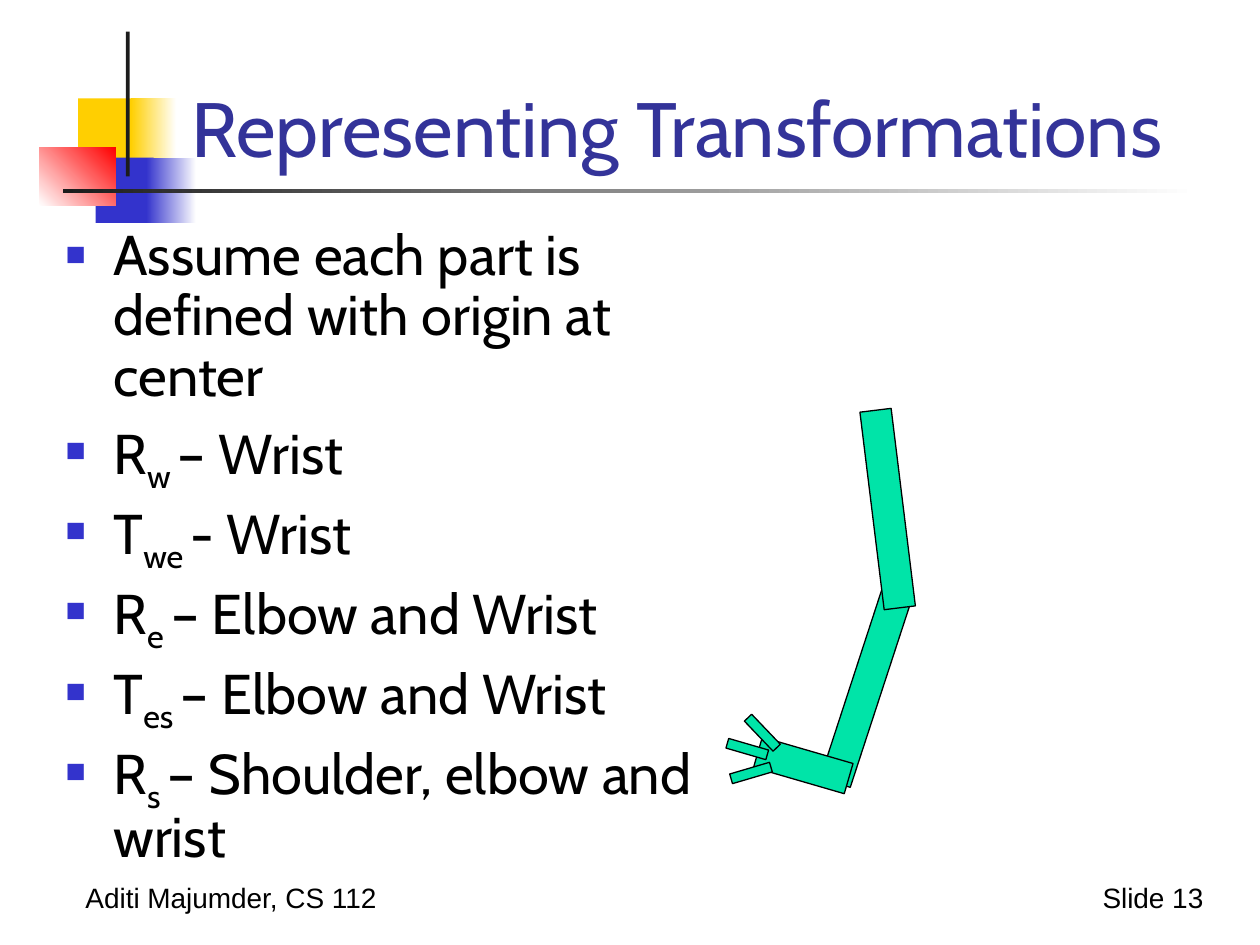
from dataclasses import dataclass

from lxml.etree import SubElement
from pptx import Presentation
from pptx.dml.color import RGBColor
from pptx.enum.shapes import MSO_SHAPE
from pptx.enum.text import MSO_ANCHOR, MSO_AUTO_SIZE, PP_ALIGN
from pptx.oxml.ns import qn
from pptx.util import Inches, Pt


@dataclass(frozen=True)
class Theme:
    heading_font: str = "Cabin"
    footer_font: str = "Arial"
    title_size: int = 44
    body_size: int = 32
    footer_size: int = 16
    title: str = "333399"
    text: str = "000000"
    yellow: str = "FFCF01"
    blue: str = "3333CC"
    red: str = "FF0000"
    dark: str = "1C1C1C"
    white: str = "FFFFFF"
    arm: str = "00E4A8"


THEME = Theme()
WIDTH, HEIGHT = 10, 7.5

TITLE = "Representing Transformations"
# Each bullet is (symbol, subscript, description).
BULLETS = [
    ("", "", "Assume each part is defined with origin at center"),
    ("R", "w ", "– Wrist"),
    ("T", "we ", "- Wrist"),
    ("R", "e ", "– Elbow and Wrist"),
    ("T", "es ", "– Elbow and Wrist"),
    ("R", "s ", "– Shoulder, elbow and wrist"),
]
# Each footer is (text, left, width, alignment).
FOOTERS = [
    ("Aditi Majumder, CS 112", 0.58, 2.55, PP_ALIGN.LEFT),
    ("Slide 13", 8.62, 1.03, PP_ALIGN.RIGHT),
]
# Each ornament is (box, colours from start to end, counter-clockwise angle).
ORNAMENTS = [
    ((0.62, 0.78, 0.48, 0.52), (THEME.yellow,), 0),
    ((1.04, 0.78, 0.36, 0.52), (THEME.yellow, THEME.white), 0),
    ((0.76, 1.25, 0.46, 0.52), (THEME.blue,), 0),
    ((1.16, 1.25, 0.40, 0.52), (THEME.blue, THEME.white), 0),
    ((0.31, 1.17, 0.61, 0.46), (THEME.white, THEME.red), 45),
    ((1.00, 0.25, 0.03, 1.15), (THEME.dark,), 0),
    ((0.50, 1.50, 9.00, 0.03), (THEME.dark, THEME.white), 0),
]
# Each limb is (left, top, rotation); the parts of one kind share a size.
LIMB_SIZE, PALM_SIZE, FINGER_SIZE = (0.25, 1.58), (0.25, 0.75), (0.08, 0.33)
FOREARM = (6.75, 4.67, 18.1)
UPPER_ARM = (6.92, 3.25, 353)
PALM = (6.25, 5.7, 106.2)
FINGERS = [(6.01, 5.65, 136.3), (5.89, 5.78, 106.2), (5.92, 5.97, 73.6)]


def color(value):
    return RGBColor.from_string(value)


def place(shape, left, top, width, height):
    shape.left, shape.top = Inches(left), Inches(top)
    shape.width, shape.height = Inches(width), Inches(height)


def add_rectangle(shapes, box, colors, angle=0, rotation=0, outline=None):
    shape = shapes.add_shape(MSO_SHAPE.RECTANGLE, *map(Inches, box))
    shape.shadow.inherit = False
    shape.rotation = rotation
    if len(colors) == 1:
        shape.fill.solid()
        shape.fill.fore_color.rgb = color(colors[0])
    else:
        shape.fill.gradient()
        shape.fill.gradient_angle = angle
        for stop, value in zip(shape.fill.gradient_stops, colors):
            stop.color.rgb = color(value)
    if outline:
        shape.line.color.rgb = color(outline)
        shape.line.width = Pt(0.75)
    else:
        shape.line.fill.background()


def add_arm_part(shapes, part, size):
    left, top, rotation = part
    add_rectangle(shapes, (left, top, *size), (THEME.arm,),
                  rotation=rotation, outline=THEME.text)


def add_run(paragraph, text, size, font=THEME.heading_font, fill=THEME.text, baseline=0):
    run = paragraph.add_run()
    run.text = text
    run.font.name, run.font.size = font, Pt(size)
    run.font.color.rgb = color(fill)
    if baseline:
        run.font._element.set("baseline", str(baseline * 1000))


def format_bullet(paragraph):
    """Set the hanging indent, relative spacing and square marker."""
    paragraph.line_spacing = 0.9
    properties = paragraph._p.get_or_add_pPr()
    indent = Inches(0.38)
    properties.set("marL", str(indent))
    properties.set("indent", str(-indent))
    spacing = SubElement(properties, qn("a:spcBef"))
    SubElement(spacing, qn("a:spcPct"), val="20000")
    marker_color = SubElement(properties, qn("a:buClr"))
    SubElement(marker_color, qn("a:srgbClr"), val=THEME.blue)
    SubElement(properties, qn("a:buSzPct"), val="60000")
    SubElement(properties, qn("a:buFont"), typeface=THEME.footer_font)
    SubElement(properties, qn("a:buChar"), char="■")


def fill_title(title):
    place(title, 1.42, 0.25, 8.36, 1.17)
    frame = title.text_frame
    frame.auto_size = MSO_AUTO_SIZE.NONE
    frame.vertical_anchor = MSO_ANCHOR.BOTTOM
    frame.paragraphs[0].alignment = PP_ALIGN.LEFT
    add_run(frame.paragraphs[0], TITLE, THEME.title_size, fill=THEME.title)


def fill_body(body):
    place(body, 0.42, 1.75, 5.25, 5.17)
    frame = body.text_frame
    frame.auto_size = MSO_AUTO_SIZE.NONE
    for index, parts in enumerate(BULLETS):
        paragraph = frame.add_paragraph() if index else frame.paragraphs[0]
        format_bullet(paragraph)
        for text, baseline in zip(parts, (0, -25, 0)):
            if text:
                add_run(paragraph, text, THEME.body_size, baseline=baseline)


def add_footer(shapes, text, left, width, alignment):
    box = shapes.add_textbox(*map(Inches, (left, 6.94, width, 0.37)))
    box.text_frame.word_wrap = False
    paragraph = box.text_frame.paragraphs[0]
    paragraph.alignment = alignment
    add_run(paragraph, text, THEME.footer_size, font=THEME.footer_font)


def main():
    presentation = Presentation()
    presentation.slide_width, presentation.slide_height = Inches(WIDTH), Inches(HEIGHT)
    slide = presentation.slides.add_slide(presentation.slide_layouts[1])
    shapes = slide.shapes
    title, body = slide.placeholders

    for box, colors, angle in ORNAMENTS:
        add_rectangle(shapes, box, colors, angle)
    for footer in FOOTERS:
        add_footer(shapes, *footer)
    add_arm_part(shapes, FOREARM, LIMB_SIZE)

    fill_title(title)
    fill_body(body)
    for placeholder in (title, body):  # bring the text in front of the ornaments
        shapes.element.append(placeholder.element)

    hand = shapes.add_group_shape()
    add_arm_part(hand.shapes, PALM, PALM_SIZE)
    for finger in FINGERS:
        add_arm_part(hand.shapes, finger, FINGER_SIZE)
    add_arm_part(shapes, UPPER_ARM, LIMB_SIZE)

    presentation.save("out.pptx")


if __name__ == "__main__":
    main()
